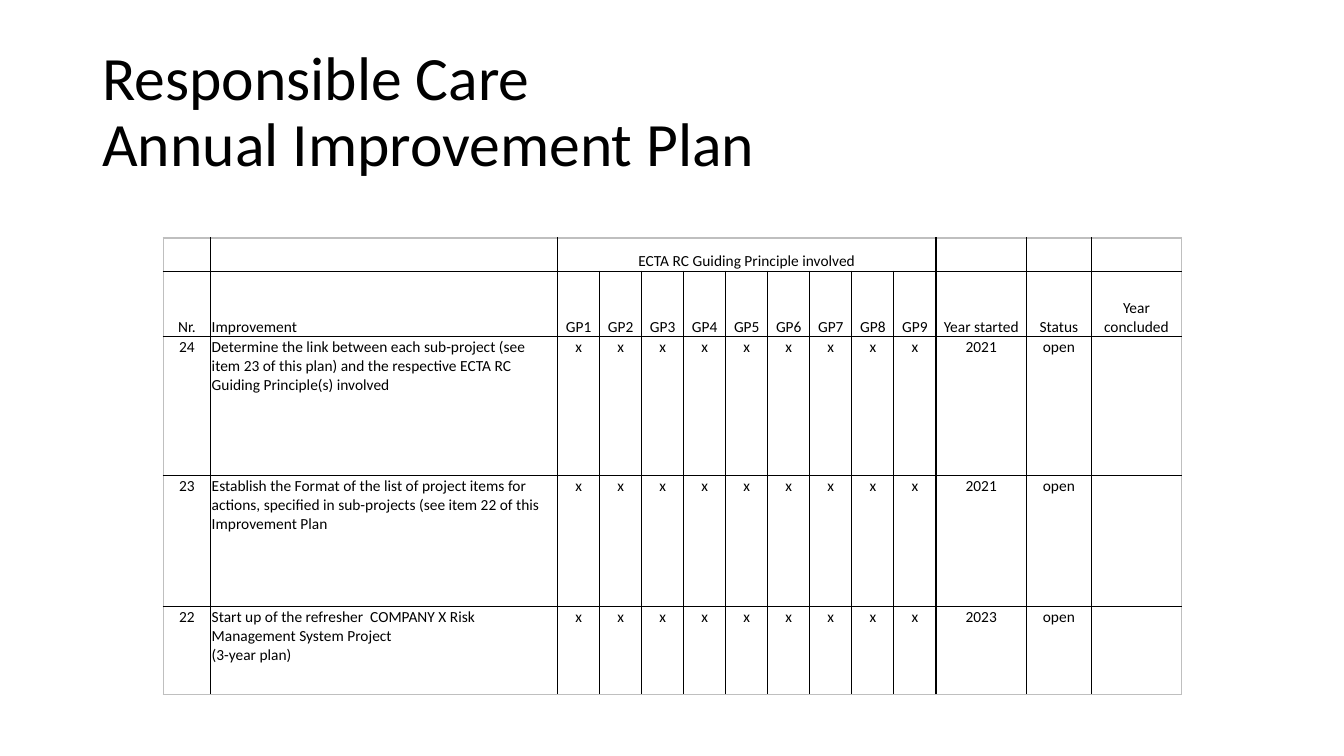
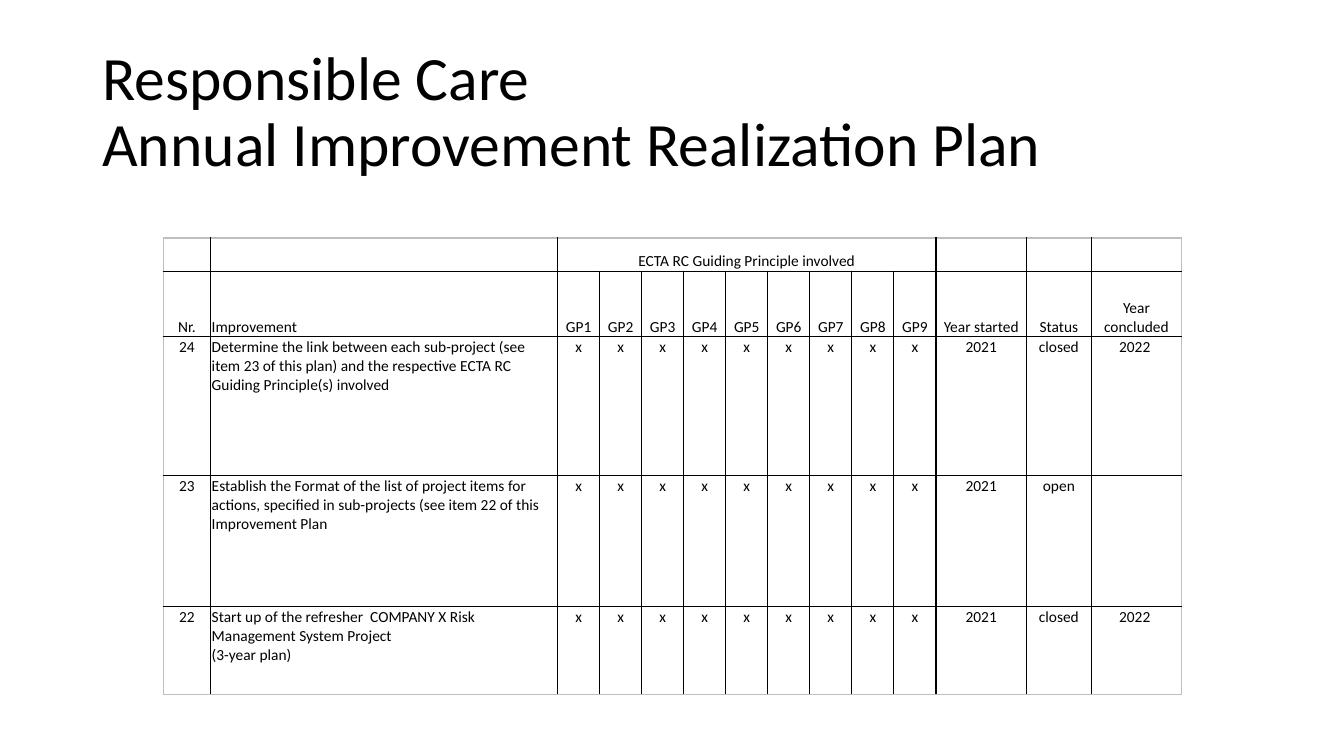
from lxml.etree import SubElement
from pptx import Presentation
from pptx.dml.color import RGBColor
from pptx.enum.text import MSO_ANCHOR, PP_ALIGN
from pptx.oxml.ns import qn
from pptx.util import Inches, Pt

BLACK = RGBColor(0x00, 0x00, 0x00)
WHITE = RGBColor(0xFF, 0xFF, 0xFF)
FRAME_GREY = RGBColor(0xBF, 0xBF, 0xBF)

PRINCIPLES = 9
HEADER_ROWS = 2
GROUP_COLUMN = 2
COLUMN_SHARES = [3.53, 25.81] + [3.13] * PRINCIPLES + [6.75, 4.8, 6.75]
ROW_SHARES = [4.4, 8.67, 18.4, 17.33, 11.6]
LEFT_COLUMN = 1

GROUP_HEADING = "ECTA RC Guiding Principle involved"
HEADINGS = [
    "Nr.", "Improvement",
    *(f"GP{number}" for number in range(1, PRINCIPLES + 1)),
    "Year started", "Status", "Year concluded",
]
IMPROVEMENTS = [
    ("24", "Determine the link between each sub-project (see item 23 of this plan) "
           "and the respective ECTA RC Guiding Principle(s) involved"),
    ("23", "Establish the Format of the list of project items for actions, specified "
           "in sub-projects (see item 22 of this Improvement Plan"),
    ("22", "Start up of the refresher  COMPANY X Risk Management System Project\n"
           "(3-year plan)"),
]
PLANS = [
    ("Responsible Care \vAnnual Improvement Plan",
     [("2021", "open", ""), ("2021", "open", ""), ("2023", "open", "")]),
    ("Responsible Care \vAnnual Improvement Realization Plan",
     [("2021", "closed", "2022 "), ("2021", "open", ""), ("2021", "closed", "2022 ")]),
]


def apply(target, values):
    for name, value in values.items():
        setattr(target, name, value)


class PlanDeck:
    """Holds the deck style and the current slide; lengths are percent of the slide."""

    TITLE_FONT = {"name": "Calibri", "size": Pt(44)}
    CELL_FONT = {"name": "Calibri", "size": Pt(11)}
    CELL_MARGINS = {
        "margin_left": Inches(0.01), "margin_right": Inches(0.01),
        "margin_top": Inches(0.01), "margin_bottom": 0,
    }
    TABLE_FLAGS = {"first_row": False, "horz_banding": False}
    BORDER = Pt(1)

    def __init__(self):
        self.presentation = Presentation()
        apply(self.presentation, {"slide_width": Inches(13.33), "slide_height": Inches(7.5)})
        self.slide = None

    def across(self, share):
        return round(self.presentation.slide_width * share / 100)

    def down(self, share):
        return round(self.presentation.slide_height * share / 100)

    def add_slide(self):
        self.slide = self.presentation.slides.add_slide(self.presentation.slide_layouts[6])
        fill = self.slide.background.fill
        fill.solid()
        fill.fore_color.rgb = WHITE

    def style_text(self, text_frame, font_values, paragraph_values):
        for paragraph in text_frame.paragraphs:
            apply(paragraph, paragraph_values)
            for run in paragraph.runs:
                apply(run.font, font_values)
                run.font.color.rgb = BLACK

    def add_title(self, text):
        shape = self.slide.shapes.add_textbox(
            self.across(6.88), self.down(5.33), self.across(86.25), self.down(19.33))
        text_frame = shape.text_frame
        apply(text_frame, {"word_wrap": True, "vertical_anchor": MSO_ANCHOR.MIDDLE})
        text_frame.text = text
        self.style_text(text_frame, self.TITLE_FONT, {"line_spacing": 0.9})

    def add_borders(self, cell, colours):
        properties = cell._tc.get_or_add_tcPr()
        for side, colour in colours.items():
            line = SubElement(properties, qn(f"a:ln{side}"), w=str(self.BORDER))
            fill = SubElement(line, qn("a:solidFill"))
            SubElement(fill, qn("a:srgbClr"), val=str(colour))

    def style_cell(self, cell, row, column):
        apply(cell, self.CELL_MARGINS)
        cell.vertical_anchor = MSO_ANCHOR.BOTTOM if row < HEADER_ROWS else MSO_ANCHOR.TOP
        alignment = PP_ALIGN.LEFT if column == LEFT_COLUMN else PP_ALIGN.CENTER
        self.style_text(cell.text_frame, self.CELL_FONT, {"alignment": alignment})
        on_frame = {
            "L": column == 0, "R": column == len(COLUMN_SHARES) - 1,
            "T": row == 0, "B": row == len(ROW_SHARES) - 1,
        }
        self.add_borders(cell, {
            side: FRAME_GREY if outer else BLACK for side, outer in on_frame.items()})
        cell.fill.background()

    def add_table(self, rows):
        table = self.slide.shapes.add_table(
            len(ROW_SHARES), len(COLUMN_SHARES), self.across(12.15), self.down(31.47),
            self.across(sum(COLUMN_SHARES)), self.down(sum(ROW_SHARES))).table
        apply(table, self.TABLE_FLAGS)
        for column, share in zip(table.columns, COLUMN_SHARES):
            column.width = self.across(share)
        for row, share in zip(table.rows, ROW_SHARES):
            row.height = self.down(share)
        for row, texts in enumerate(rows):
            for column, text in enumerate(texts):
                cell = table.cell(row, column)
                cell.text = text
                self.style_cell(cell, row, column)
        table.cell(0, GROUP_COLUMN).merge(table.cell(0, GROUP_COLUMN + PRINCIPLES - 1))


def plan_rows(progress):
    group_row = [""] * len(HEADINGS)
    group_row[GROUP_COLUMN] = GROUP_HEADING
    return [group_row, HEADINGS] + [
        [*improvement, *["x"] * PRINCIPLES, *state]
        for improvement, state in zip(IMPROVEMENTS, progress)
    ]


def main():
    deck = PlanDeck()
    for title, progress in PLANS:
        deck.add_slide()
        deck.add_title(title)
        deck.add_table(plan_rows(progress))
    deck.presentation.save("out.pptx")


if __name__ == "__main__":
    main()
